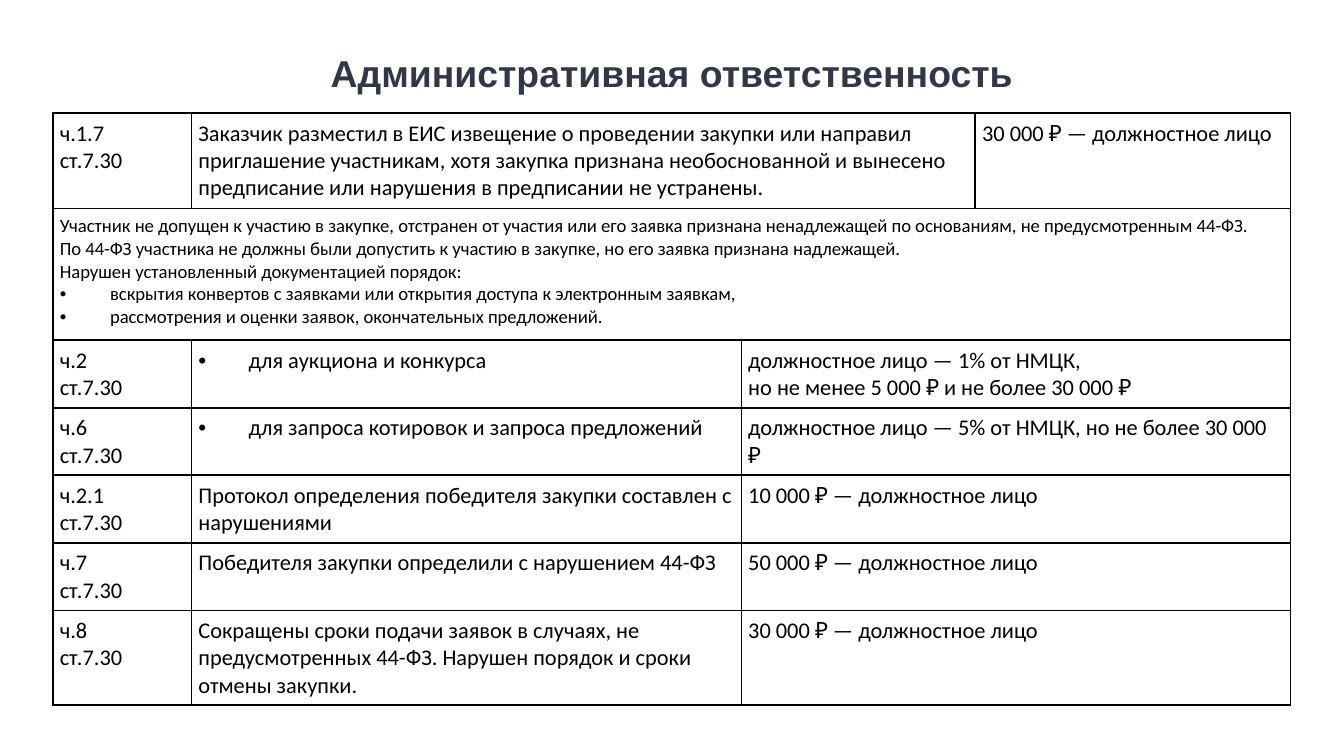
from dataclasses import dataclass

from lxml.etree import SubElement
from pptx import Presentation
from pptx.dml.color import RGBColor
from pptx.enum.text import MSO_ANCHOR, PP_ALIGN
from pptx.oxml.ns import qn
from pptx.util import Cm, Pt


@dataclass(frozen=True)
class Theme:
    title_font: str = "Arial"
    body_font: str = "Calibri"
    title_color: str = "323649"
    ink: str = "000000"
    title_size: int = 20
    body_size: int = 12
    note_size: int = 10


theme = Theme()
BULLET = "• "
INSET = Cm(0.13)
INDENT = Cm(0.95)
TAB = Cm(1.27)
COLUMN_WIDTHS = [2.62, 10.39, 4.42, 5.96]
ROW_HEIGHTS = [1.8, 2.49, 0.89, 0.89, 0.89, 0.89, 1.22]

# Each row lists (column, columns spanned, paragraphs); "\n" is a line break.
opening_row = [
    (0, 1, ["ч.1.7\nст.7.30"]),
    (1, 2, ["Заказчик разместил в ЕИС извещение о проведении закупки или направил "
            "приглашение участникам, хотя закупка признана необоснованной и вынесено "
            "предписание или нарушения в предписании не устранены."]),
    (3, 1, ["30 000 ₽ — должностное лицо"]),
]
note_row = [
    (0, 4, ["Участник не допущен к участию в закупке, отстранен от участия или его заявка "
            "признана ненадлежащей по основаниям, не предусмотренным 44-ФЗ.",
            "По 44-ФЗ участника не должны были допустить к участию в закупке, "
            "но его заявка признана надлежащей.",
            "Нарушен установленный документацией порядок:",
            BULLET + "вскрытия конвертов с заявками или открытия доступа к электронным заявкам,",
            BULLET + "рассмотрения и оценки заявок, окончательных предложений."]),
]
penalties = [
    ("ч.2", BULLET + "для аукциона и конкурса",
     "должностное лицо — 1% от НМЦК,\nно не менее 5 000 ₽ и не более 30 000 ₽"),
    ("ч.6", BULLET + "для запроса котировок и запроса предложений",
     "должностное лицо — 5% от НМЦК, но не более 30 000 ₽"),
    ("ч.2.1", "Протокол определения победителя закупки составлен с нарушениями",
     "10 000 ₽ — должностное лицо"),
    ("ч.7", "Победителя закупки определили с нарушением 44-ФЗ",
     "50 000 ₽ — должностное лицо"),
    ("ч.8", "Сокращены сроки подачи заявок в случаях, не предусмотренных 44-ФЗ. "
            "Нарушен порядок и сроки отмены закупки.",
     "30 000 ₽ — должностное лицо"),
]
rows = [opening_row, note_row] + [
    [(0, 1, [part + "\nст.7.30"]), (1, 1, [offence]), (2, 2, [fine])]
    for part, offence, fine in penalties
]


def add_text(para, text, font_name, size, color, bold=False):
    for index, line in enumerate(text.split("\n")):
        if index:
            para.add_line_break()
        span = para.add_run()
        span.text = line
        span.font.name = font_name
        span.font.size = Pt(size)
        span.font.bold = bold
        span.font.color.rgb = RGBColor.from_string(color)


def add_bullet(para):
    properties = para._p.get_or_add_pPr()
    properties.set("marL", str(INDENT))
    properties.set("indent", str(-INDENT))
    SubElement(properties, qn("a:buFont"), typeface="Arial")
    SubElement(properties, qn("a:buChar"), char=BULLET.strip())
    tabs = SubElement(properties, qn("a:tabLst"))
    SubElement(tabs, qn("a:tab"), pos=str(TAB), algn="l")


deck = Presentation()
deck.slide_width = Cm(25.4)
deck.slide_height = Cm(14.29)
page = deck.slides.add_slide(deck.slide_layouts[6])

title_box = page.shapes.add_textbox(Cm(1.27), Cm(0.58), Cm(22.86), Cm(1.57))
title_frame = title_box.text_frame
title_frame.word_wrap = True
title_frame.vertical_anchor = MSO_ANCHOR.MIDDLE
title_para = title_frame.paragraphs[0]
title_para.alignment = PP_ALIGN.CENTER
add_text(title_para, "Административная ответственность", theme.title_font,
         theme.title_size, theme.title_color, bold=True)

table = page.shapes.add_table(len(ROW_HEIGHTS), len(COLUMN_WIDTHS), Cm(1), Cm(2.14),
                              Cm(sum(COLUMN_WIDTHS)), Cm(sum(ROW_HEIGHTS))).table
table.first_row = False
table.horz_banding = False
for column, width in zip(table.columns, COLUMN_WIDTHS):
    column.width = Cm(width)
for row, height in zip(table.rows, ROW_HEIGHTS):
    row.height = Cm(height)

for cell in table.iter_cells():
    cell.margin_left = cell.margin_right = INSET
    cell.margin_top = cell.margin_bottom = INSET
    cell_properties = cell._tc.get_or_add_tcPr()
    for side in ("a:lnL", "a:lnR", "a:lnT", "a:lnB"):
        border = SubElement(cell_properties, qn(side), w=str(Pt(1)))
        border_fill = SubElement(border, qn("a:solidFill"))
        SubElement(border_fill, qn("a:srgbClr"), val=theme.ink)
    cell.fill.background()
    cell.text_frame.paragraphs[0].font.size = Pt(theme.note_size)

for row_index, row_cells in enumerate(rows):
    size = theme.note_size if row_cells is note_row else theme.body_size
    for column_index, columns_spanned, paragraphs in row_cells:
        cell = table.cell(row_index, column_index)
        if columns_spanned > 1:
            cell.merge(table.cell(row_index, column_index + columns_spanned - 1))
        frame = cell.text_frame
        for index, text in enumerate(paragraphs):
            para = frame.add_paragraph() if index else frame.paragraphs[0]
            if text.startswith(BULLET):
                for default in list(para._p.get_or_add_pPr()):
                    para._p.pPr.remove(default)
                add_bullet(para)
            para.font.size = Pt(size)
            add_text(para, text.removeprefix(BULLET), theme.body_font, size, theme.ink)

deck.save("out.pptx")
